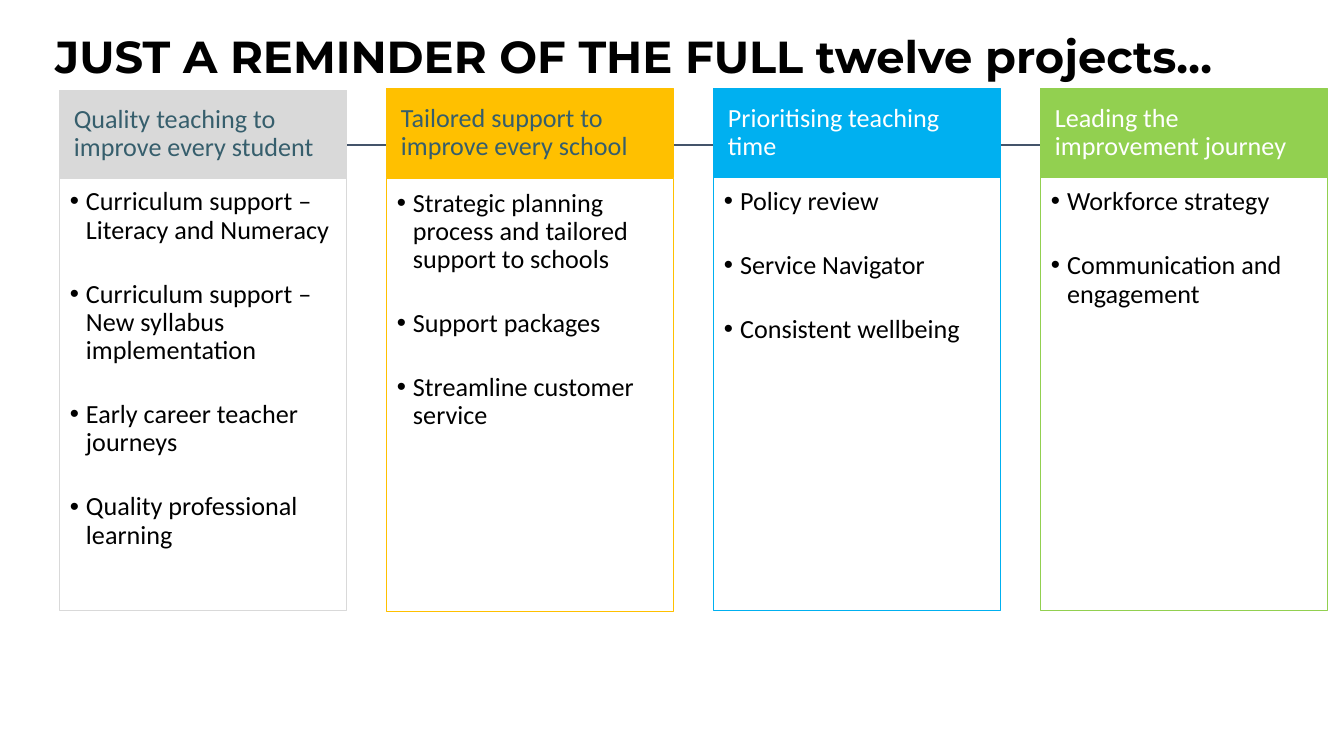
from lxml.etree import SubElement
from pptx import Presentation
from pptx.dml.color import RGBColor
from pptx.enum.shapes import MSO_CONNECTOR, MSO_SHAPE
from pptx.enum.text import MSO_ANCHOR, MSO_AUTO_SIZE, PP_ALIGN
from pptx.oxml.ns import qn
from pptx.util import Inches, Pt

BLACK = RGBColor(0x00, 0x00, 0x00)
WHITE = RGBColor(0xFF, 0xFF, 0xFF)
TEAL = RGBColor(0x36, 0x5E, 0x6C)
SLATE = RGBColor(0x44, 0x54, 0x6A)
GREY = RGBColor(0xD9, 0xD9, 0xD9)
AMBER = RGBColor(0xFF, 0xC0, 0x00)
BLUE = RGBColor(0x00, 0xB0, 0xF0)
GREEN = RGBColor(0x92, 0xD0, 0x50)

TITLE = "JUST A REMINDER OF THE FULL twelve projects…"
# heading, colour, heading text colour, heading top, list top, projects
THEMES = [
    ("Quality teaching to improve every student", GREY, TEAL, 0.67, 1.32, [
        "Curriculum support – Literacy and Numeracy",
        "Curriculum support – New syllabus implementation",
        "Early career teacher journeys",
        "Quality professional learning"]),
    ("Tailored support to improve every school", AMBER, TEAL, 0.66, 1.33, [
        "Strategic planning process and tailored support to schools",
        "Support packages",
        "Streamline customer service"]),
    ("Prioritising teaching time", BLUE, WHITE, 0.66, 1.32, [
        "Policy review",
        "Service Navigator",
        "Consistent wellbeing"]),
    ("Leading the improvement journey", GREEN, WHITE, 0.66, 1.32, [
        "Workforce strategy",
        "Communication and engagement"]),
]
LEFT, LAST, WIDTH = 0.44, 7.74, 2.14
STEP = (LAST - LEFT) / (len(THEMES) - 1)
HEAD, BODY = 0.66, 3.22


def style(par, font, size, color, bold=False):
    par.alignment = PP_ALIGN.LEFT
    par.line_spacing = 0.9
    for run in par.runs:
        run.font.name = font
        run.font.size = Pt(size)
        run.font.bold = bold
        run.font.color.rgb = color


def add_bullet(par):
    props = par._p.get_or_add_pPr()
    props.set("marL", str(Inches(0.12)))
    props.set("indent", str(-Inches(0.12)))
    SubElement(props, qn("a:buFont"), typeface="Arial")
    SubElement(props, qn("a:buChar"), char="•")


def add_box(slide, x, y, height, color, lines, insets, anchor):
    box = slide.shapes.add_shape(MSO_SHAPE.RECTANGLE, Inches(x), Inches(y),
                                 Inches(WIDTH), Inches(height))
    box.shadow.inherit = False
    box.line.color.rgb = color
    box.line.width = Pt(0.5)
    frame = box.text_frame
    frame.word_wrap = True
    frame.vertical_anchor = anchor
    (frame.margin_left, frame.margin_top,
     frame.margin_right, frame.margin_bottom) = map(Inches, insets)
    frame.text = "\n".join(lines)
    return box


def add_theme(slide, x, theme):
    heading, color, ink, top, below, projects = theme
    head = add_box(slide, x, top, HEAD, color, [heading],
                   (0.11, 0.06, 0.11, 0.06), MSO_ANCHOR.MIDDLE)
    head.fill.solid()
    head.fill.fore_color.rgb = color
    style(head.text_frame.paragraphs[0], "Calibri", 14, ink)

    body = add_box(slide, x, below, BODY, color, projects,
                   (0.08, 0.08, 0.11, 0.12), MSO_ANCHOR.TOP)
    body.fill.background()
    for par in body.text_frame.paragraphs:
        style(par, "Calibri", 14, BLACK)
        par.space_after = Pt(19.2)
        add_bullet(par)


def add_title(slide):
    title = slide.shapes.title
    title.left, title.top = Inches(0.31), Inches(0.27)
    title.width, title.height = Inches(9.49), Inches(0.33)
    frame = title.text_frame
    frame.text = TITLE
    frame.word_wrap = True
    frame.auto_size = MSO_AUTO_SIZE.NONE
    frame.vertical_anchor = MSO_ANCHOR.MIDDLE
    style(frame.paragraphs[0], "Montserrat", 24, BLACK, bold=True)


def add_link(slide):
    """Draw the line that runs behind the headings."""
    link = slide.shapes.add_connector(MSO_CONNECTOR.STRAIGHT, Inches(LEFT),
                                      Inches(1.08), Inches(9.49), Inches(1.08))
    link.line.color.rgb = SLATE
    link.line.width = Pt(1)
    SubElement(link._element.spPr, qn("a:effectLst"))


def main():
    deck = Presentation()
    deck.slide_width = Inches(10)
    deck.slide_height = deck.slide_width * 9 // 16
    slide = deck.slides.add_slide(deck.slide_layouts[5])
    add_title(slide)
    add_link(slide)
    for i, theme in enumerate(THEMES):
        add_theme(slide, LEFT + i * STEP, theme)
    deck.save("out.pptx")


if __name__ == "__main__":
    main()
